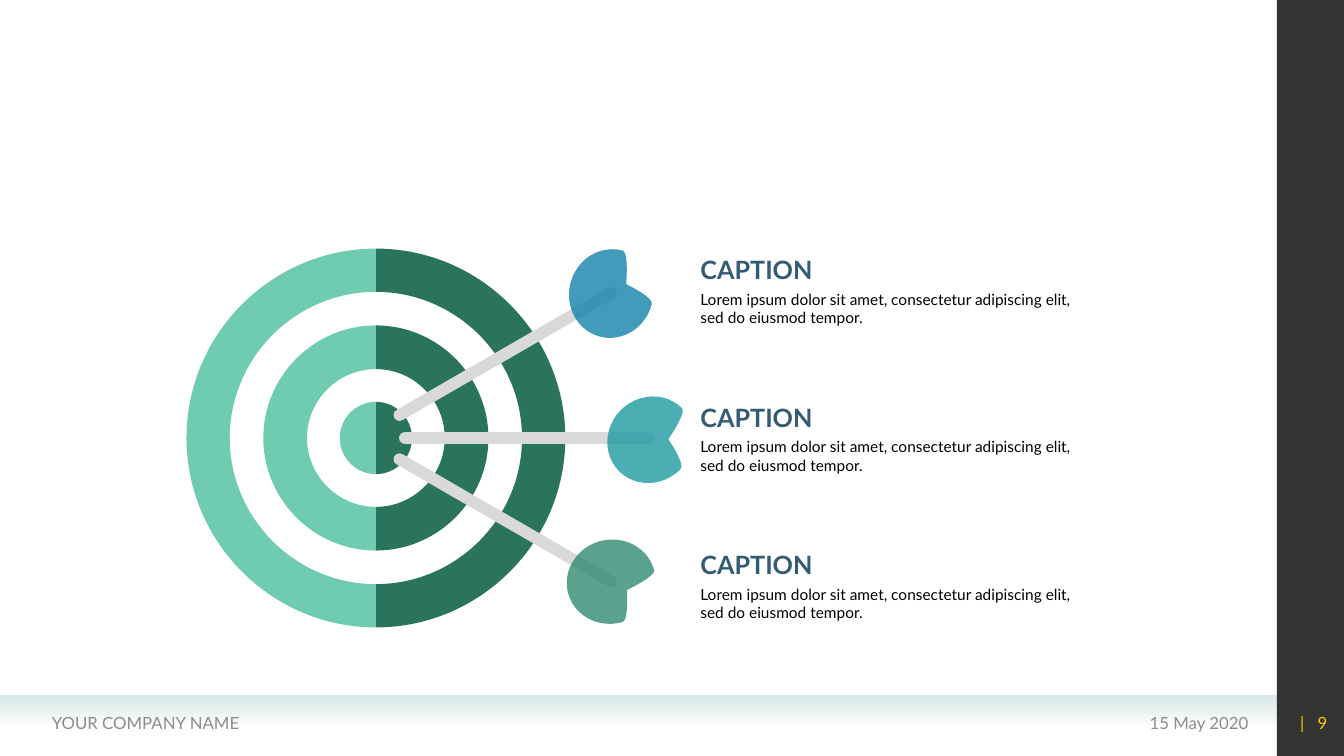
from dataclasses import dataclass

from lxml import etree
from pptx import Presentation
from pptx.dml.color import RGBColor
from pptx.enum.shapes import MSO_SHAPE
from pptx.enum.text import MSO_ANCHOR, MSO_AUTO_SIZE, PP_ALIGN
from pptx.oxml.ns import qn
from pptx.util import Inches, Pt

RECT, OVAL = MSO_SHAPE.RECTANGLE, MSO_SHAPE.OVAL
ROUND, TEAR = MSO_SHAPE.ROUNDED_RECTANGLE, MSO_SHAPE.TEAR
TOP, MIDDLE = MSO_ANCHOR.TOP, MSO_ANCHOR.MIDDLE
LEFT, RIGHT = PP_ALIGN.LEFT, PP_ALIGN.RIGHT
FIT, FIXED = MSO_AUTO_SIZE.SHAPE_TO_FIT_TEXT, MSO_AUTO_SIZE.NONE

# The slide is a grid of 16 columns by 9 rows of square cells.
COLS, ROWS = 16, 9
CELL = Inches(7.5) / ROWS
BOW = 0.55  # handle length of a quarter circle, as a share of its radius


@dataclass(frozen=True)
class Theme:
    font: str = "Lato"
    white: str = "FFFFFF"
    ink: str = "000000"
    head: str = "335B74"
    grey: str = "8C8C8C"
    gold: str = "FFCC00"
    band: str = "D9E9E8"
    dark: str = "2A745E"
    light: str = "70CCB1"
    shaft: str = "D9D9D9"
    blue: str = "1482AB"
    teal: str = "1D9AA1"
    green: str = "318B71"
    big: int = 18
    small: int = 12
    body: int = 11


THEME = Theme()
LOREM = ("Lorem ipsum dolor sit amet, consectetur adipiscing elit, "
         "sed do eiusmod tempor.")
ITEMS = [("CAPTION", LOREM)] * 3
# Tilt, then middle of shaft and of fin from the bullseye, then fin colour.
DARTS = [(0, (1.8, 0), (3.27, 0.02), THEME.teal),
         (-30, (1.54, -1), (2.8, -1.72), THEME.blue),
         (30, (1.54, 0.98), (2.8, 1.71), THEME.green)]


def emu(*cells):
    return [round(c * CELL) for c in cells]


def rgb(color):
    return RGBColor.from_string(color)


def fade(node, share):
    """Set the opacity of a colour element."""
    etree.SubElement(node, qn("a:alpha")).set("val", str(round(share * 100000)))


def paint(shape, color, opacity=1):
    shape.shadow.inherit = False
    shape.line.fill.background()
    shape.fill.solid()
    shape.fill.fore_color.rgb = rgb(color)
    if opacity < 1:
        fade(next(shape._element.spPr.iter(qn("a:srgbClr"))), opacity)


def add_shape(slide, kind, box, color, opacity=1, turn=0, adjust=None):
    shape = slide.shapes.add_shape(kind, *emu(*box))
    paint(shape, color, opacity)
    shape.rotation = turn
    if adjust is not None:
        shape.adjustments[0] = adjust
    return shape


def add_text(slide, box, *parts, size=THEME.small, color=THEME.grey, bold=False,
             align=LEFT, anchor=MIDDLE, fit=FIXED, track=0):
    """Write the parts as runs; track widens all but the last, in points."""
    frame = slide.shapes.add_textbox(*emu(*box)).text_frame
    frame.word_wrap = True
    frame.auto_size = fit
    frame.vertical_anchor = anchor
    line = frame.paragraphs[0]
    line.alignment = align
    for part in parts:
        run = line.add_run()
        run.text = part
        run.font.name, run.font.size = THEME.font, Pt(size)
        run.font.bold, run.font.color.rgb = bold, rgb(color)
        if track and part is not parts[-1]:
            run.font._element.set("spc", str(round(track * 100)))


def add_frame(slide, box):
    """Footer band, side bar and footer texts."""
    x, y, w, h = box
    side = 0.05 * w
    edge = x + w - side
    band = add_shape(slide, RECT, (x, y + 0.92 * h, w - side, 0.37), THEME.band)
    band.fill.gradient()
    band.fill.gradient_angle = 270
    for stop, place in zip(band.fill.gradient_stops, (0, 1)):
        stop.position = place
        stop.color.rgb = rgb(THEME.band)
    fade(list(band._element.spPr.iter(qn("a:srgbClr")))[-1], 0)
    add_shape(slide, RECT, (edge, y, side, h), THEME.ink, opacity=0.8)

    row, tall = y + h - 0.64, 0.48
    add_text(slide, (edge - 4.29, row, 4.07, tall), "15 May 2020", align=RIGHT)
    add_text(slide, (x + 0.5, row, 5.88, tall), "YOUR COMPANY NAME")
    add_text(slide, (edge - 0.08, row, side, tall), "| ", "9",
             color=THEME.gold, align=RIGHT, track=3.2)


def add_captions(slide, box):
    x, y, w, h = box
    step = h / len(ITEMS)
    for i, (head, body) in enumerate(ITEMS):
        top = y + i * step
        add_text(slide, (x, top, 1.86, 0.48), head, size=THEME.big,
                 color=THEME.head, bold=True, fit=FIT)
        add_text(slide, (x, top + 0.42, w, 0.56), body, size=THEME.body,
                 color=THEME.ink, anchor=TOP, fit=FIT)


def bend(route):
    """Turn each half circle of six straight steps into two curves."""
    for node in list(route):
        if node.tag == qn("a:moveTo"):
            spot = 0
        elif node.tag == qn("a:lnTo"):
            if spot in (0, 3, 7, 10):
                curve = etree.Element(qn("a:cubicBezTo"))
                route.replace(node, curve)
                curve.append(node[0])
            elif spot != 6:
                curve.append(node[0])
                route.remove(node)
            spot += 1


def add_half(slide, cx, cy, rings, side, color):
    """Half of the rings: side is 1 for right and -1 for left."""
    def arc(r):
        steps = ((0, -1), (BOW, -1), (1, -BOW), (1, 0), (1, BOW), (BOW, 1), (0, 1))
        return [emu(cx + side * r * u, cy + r * v) for u, v in steps]

    pen = slide.shapes.build_freeform(*arc(rings[0][0])[0])
    for i, (outer, inner) in enumerate(rings):
        ring = arc(outer) + (arc(inner)[::-1] if inner else [])
        if i:
            pen.move_to(*ring[0])
        pen.add_line_segments(ring[1:], close=True)
    half = pen.convert_to_shape()
    bend(next(half._element.spPr.iter(qn("a:path"))))
    paint(half, color)


def add_target(slide, box):
    x, y, w, h = box
    cx, cy = x + w / 2, y + h / 2
    rings = ((w / 2, 1.74), (1.34, 0.82), (0.43, 0))

    def around(dx, dy, wide, tall):
        """Box whose middle lies at an offset from the bullseye."""
        return cx + dx - wide / 2, cy + dy - tall / 2, wide, tall

    add_shape(slide, OVAL, around(0, 0, 3.94, 3.94), THEME.white)
    add_half(slide, cx, cy, rings, 1, THEME.dark)
    add_half(slide, cx, cy, rings, -1, THEME.light)
    for tilt, mid, end, color in DARTS:
        add_shape(slide, ROUND, around(*mid, 0.14, 3.05), THEME.shaft,
                  turn=90 + tilt, adjust=0.5)
        add_shape(slide, TEAR, around(*end, 1, 1.06), color, opacity=0.8,
                  turn=44.7 + tilt, adjust=0.291)


def main():
    deck = Presentation()
    deck.slide_width, deck.slide_height = emu(COLS, ROWS)
    slide = deck.slides.add_slide(deck.slide_layouts[6])
    add_frame(slide, (0, 0, COLS, ROWS))
    add_captions(slide, (8.22, 2.97, 4.96, 5.27))
    add_target(slide, (2.22, 2.96, 4.51, 4.51))
    deck.save("out.pptx")


if __name__ == "__main__":
    main()
